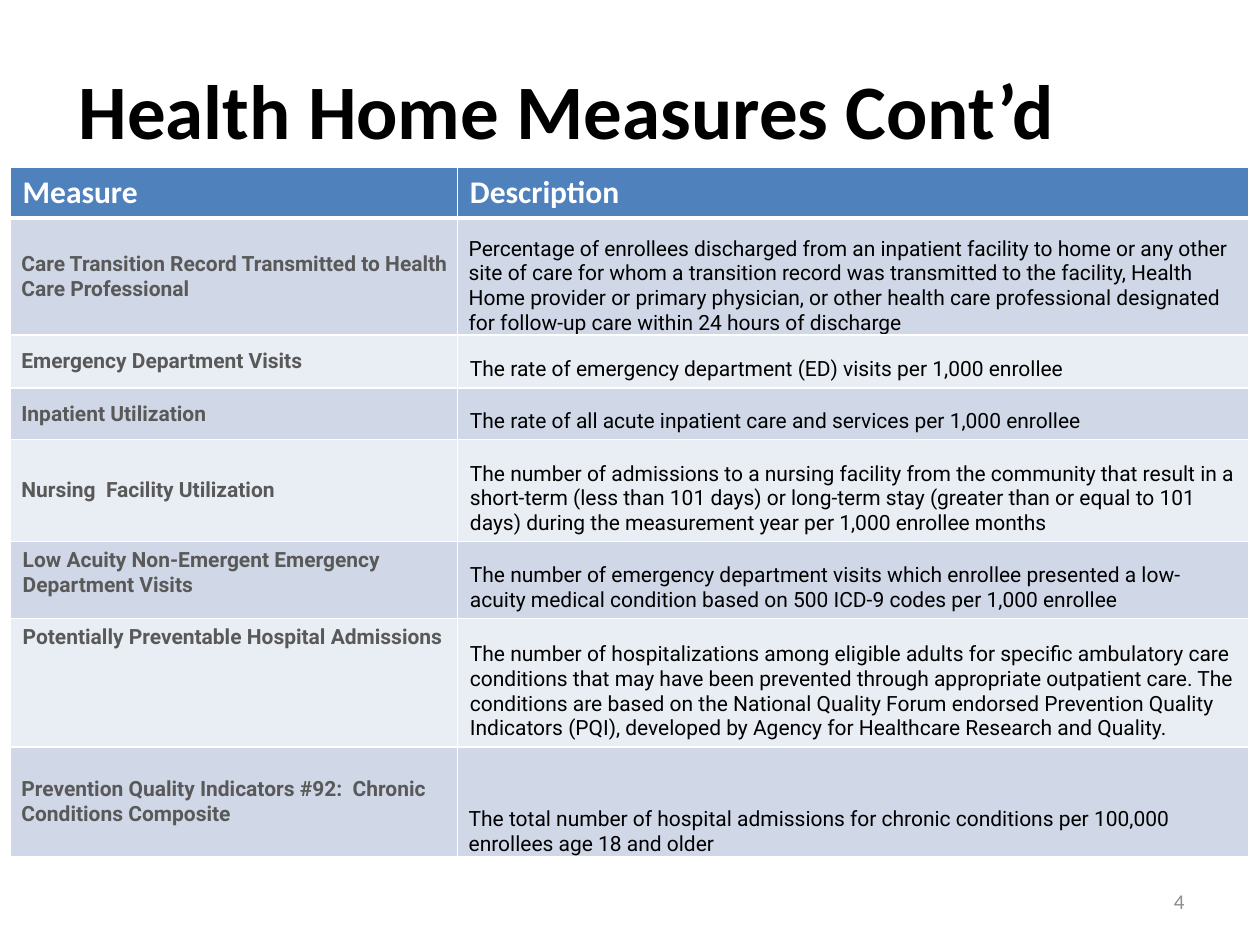
from pptx import Presentation
from pptx.dml.color import RGBColor
from pptx.enum.text import MSO_ANCHOR as ANCHOR, PP_ALIGN as ALIGN
from pptx.oxml import parse_xml
from pptx.oxml.ns import nsdecls
from pptx.util import Inches, Pt

COLUMNS = [3.55, 6.28]
HEADER_HEIGHT = 0.37
HEADINGS = ["Measure", "Description"]
MEASURES = [
    (0.93, "Care Transition Record Transmitted to Health Care Professional",
     "Percentage of enrollees discharged from an inpatient facility to home or any other "
     "site of care for whom a transition record was transmitted to the facility, Health "
     "Home provider or primary physician, or other health care professional designated "
     "for follow-up care within 24 hours of discharge", True, True),
    (0.42, "Emergency Department Visits",
     "The rate of emergency department (ED) visits per 1,000 enrollee", True, False),
    (0.41, "Inpatient Utilization",
     "The rate of all acute inpatient care and services per 1,000 enrollee", True, False),
    (0.81, "Nursing  Facility Utilization",
     "The number of admissions to a nursing facility from the community that result in a "
     "short-term (less than 101 days) or long-term stay (greater than or equal to 101 "
     "days) during the measurement year per 1,000 enrollee months", True, False),
    (0.61, "Low Acuity Non-Emergent Emergency Department Visits",
     "The number of emergency department visits which enrollee presented a low-acuity "
     "medical condition based on 500 ICD-9 codes per 1,000 enrollee", False, False),
    (1.02, "Potentially Preventable Hospital Admissions",
     "The number of hospitalizations among eligible adults for specific ambulatory care "
     "conditions that may have been prevented through appropriate outpatient care. The "
     "conditions are based on the National Quality Forum endorsed Prevention Quality "
     "Indicators (PQI), developed by Agency for Healthcare Research and Quality.",
     False, False),
    (0.87, "Prevention Quality Indicators #92:  Chronic Conditions Composite",
     "The total number of hospital admissions for chronic conditions per 100,000 "
     "enrollees age 18 and older", True, True),
]


def rgb(value):
    """Return the colour for a hex string."""
    return RGBColor.from_string(value)


def write(tf, text, size=12, font="Roboto", color="000000", bold=False, align=ALIGN.LEFT):
    """Write one formatted paragraph into a text frame."""
    tf.word_wrap = True
    p = tf.paragraphs[0]
    p.alignment = align
    r = p.add_run()
    r.text = text
    r.font.size, r.font.name, r.font.bold = Pt(size), font, bold
    r.font.color.rgb = rgb(color)


def add_text(s, box, text, **fmt):
    """Add a vertically centred text box."""
    tf = s.shapes.add_textbox(*map(Inches, box)).text_frame
    tf.vertical_anchor = ANCHOR.MIDDLE
    write(tf, text, **fmt)


def style_cell(cell, text, fill, anchor=ANCHOR.TOP, tight=False, bottom=1, **fmt):
    """Set the text, margins, white borders and fill of a cell."""
    write(cell.text_frame, text, **fmt)
    cell.vertical_anchor = anchor
    if tight:
        cell.margin_left = Inches(0.09)
        cell.margin_top = cell.margin_right = cell.margin_bottom = 0
    tc_pr = cell._tc.get_or_add_tcPr()
    for side, width in zip("LRTB", (1, 1, 1, bottom)):
        tc_pr.append(parse_xml(
            f'<a:ln{side} {nsdecls("a")} w="{Pt(width)}"><a:solidFill>'
            f'<a:srgbClr val="FFFFFF"/></a:solidFill></a:ln{side}>'))
    cell.fill.solid()
    cell.fill.fore_color.rgb = rgb(fill)


def add_measures(s, box):
    """Add the table of measures and their descriptions."""
    table = s.shapes.add_table(len(MEASURES) + 1, len(COLUMNS), *map(Inches, box)).table
    for column, width in zip(table.columns, COLUMNS):
        column.width = Inches(width)
    table.rows[0].height = Inches(HEADER_HEIGHT)
    for col, heading in enumerate(HEADINGS):
        style_cell(table.cell(0, col), heading, "4F81BD", bottom=3,
                   size=18, font="Calibri", color="FFFFFF", bold=True)
    for row, (height, name, description, centred, tight) in enumerate(MEASURES, 1):
        table.rows[row].height = Inches(height)
        fill = "D0D8E8" if row % 2 else "E9EDF4"
        style_cell(table.cell(row, 0), name, fill, tight=centred, color="595959", bold=True,
                   anchor=ANCHOR.MIDDLE if centred else ANCHOR.TOP)
        style_cell(table.cell(row, 1), description, fill, ANCHOR.BOTTOM, tight)


def main():
    """Build and save the slide."""
    prs = Presentation()
    prs.slide_width, prs.slide_height = Inches(10), Inches(7.5)
    s = prs.slides.add_slide(prs.slide_layouts[6])
    add_text(s, (0, 0.24, 9, 1.25), "Health Home Measures Cont’d",
             size=44, font="Calibri", bold=True, align=ALIGN.CENTER)
    add_measures(s, (0.08, 1.33, sum(COLUMNS), 5.48))
    add_text(s, (7.17, 6.95, 2.33, 0.4), "4",
             font="Calibri", color="8C8C8C", align=ALIGN.RIGHT)
    prs.save("out.pptx")


if __name__ == "__main__":
    main()
